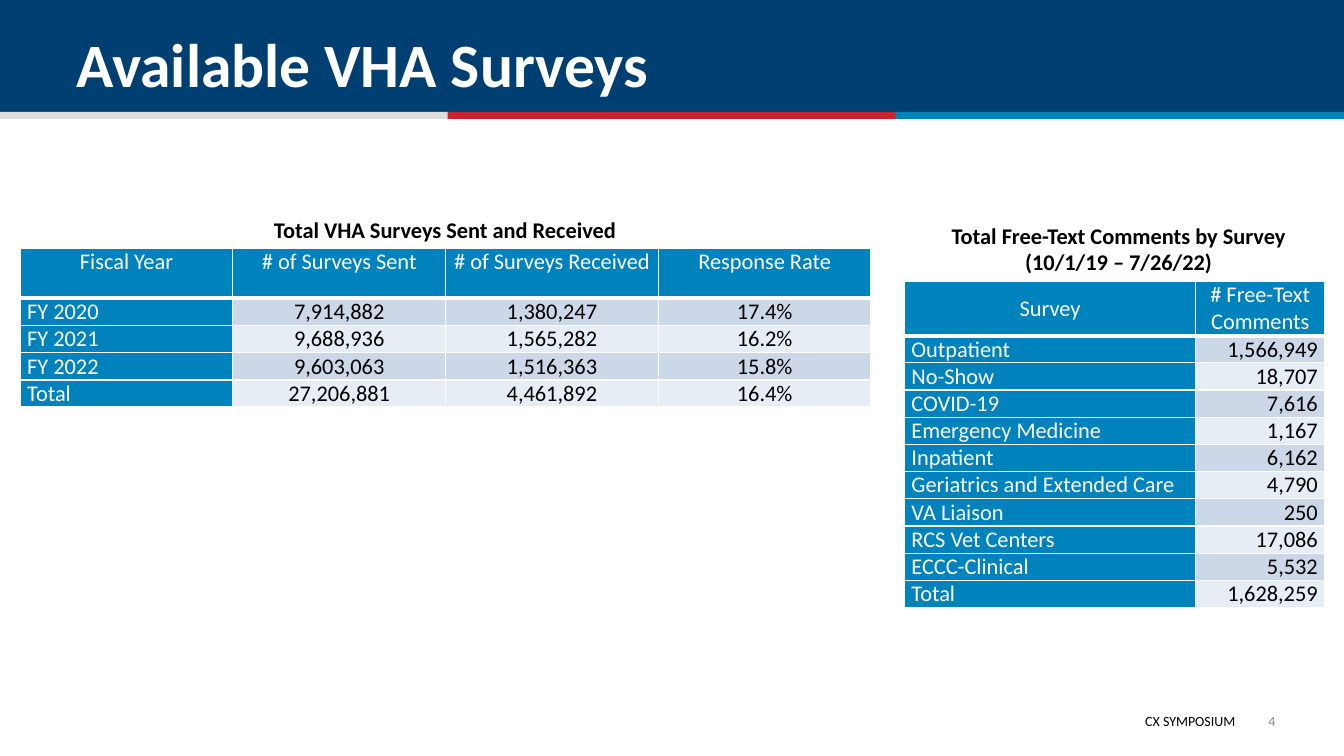
import pptx
import pptx.util
import pptx.dml.color
import pptx.enum.shapes
import pptx.enum.text
import pptx.oxml
from pptx.oxml.ns import qn

Inches, Pt = pptx.util.Inches, pptx.util.Pt
RGBColor = pptx.dml.color.RGBColor
ALIGN, ANCHOR = pptx.enum.text.PP_ALIGN, pptx.enum.text.MSO_ANCHOR

NAVY = RGBColor(0x00, 0x3F, 0x72)
BLUE = RGBColor(0x00, 0x82, 0xBD)
RED = RGBColor(0xC6, 0x26, 0x2D)
SILVER = RGBColor(0xDB, 0xDC, 0xDE)
GRAY = RGBColor(0x8C, 0x8C, 0x8C)
BAND_DARK = RGBColor(0xCC, 0xD8, 0xE8)
BAND_LIGHT = RGBColor(0xE7, 0xED, 0xF4)
WHITE = RGBColor(0xFF, 0xFF, 0xFF)
BLACK = RGBColor(0, 0, 0)

# Content
TITLE = "Available VHA Surveys"
SENT_CAPTION = "Total VHA Surveys Sent and Received"
SENT_ROWS = [
    ("Fiscal Year", "# of Surveys Sent", "# of Surveys Received", "Response Rate"),
    ("FY 2020", "7,914,882", "1,380,247", "17.4%"),
    ("FY 2021", "9,688,936", "1,565,282", "16.2%"),
    ("FY 2022", "9,603,063", "1,516,363", "15.8%"),
    ("Total", "27,206,881", "4,461,892", "16.4%"),
]
COMMENT_CAPTION = "Total Free-Text Comments by Survey (10/1/19 – 7/26/22)"
COMMENT_ROWS = [
    ("Survey", "# Free-Text Comments"),
    ("Outpatient", "1,566,949"),
    ("No-Show", "18,707"),
    ("COVID-19", "7,616"),
    ("Emergency Medicine", "1,167"),
    ("Inpatient", "6,162"),
    ("Geriatrics and Extended Care", "4,790"),
    ("VA Liaison", "250"),
    ("RCS Vet Centers", "17,086"),
    ("ECCC-Clinical", "5,532"),
    ("Total", "1,628,259"),
]
FOOTER, PAGE = "CX SYMPOSIUM", "4"
ROW_HEIGHT = 0.27


def write(tf, text, size=16, color=BLACK, bold=False, align=ALIGN.LEFT):
    p = tf.paragraphs[0]
    p.alignment = align
    r = p.add_run()
    r.text = text
    r.font.name, r.font.size, r.font.bold = "Calibri", Pt(size), bold
    r.font.color.rgb = color


def add_text(s, box, text, anchor=ANCHOR.TOP, inset=None, **fmt):
    tf = s.shapes.add_textbox(*map(Inches, box)).text_frame
    tf.word_wrap = True
    tf.vertical_anchor = anchor
    if inset is not None:
        tf.margin_left = tf.margin_right = tf.margin_top = tf.margin_bottom = Inches(inset)
    write(tf, text, **fmt)


def add_bar(s, left, top, width, height, color):
    sp = s.shapes.add_shape(pptx.enum.shapes.MSO_SHAPE.RECTANGLE,
                            *map(Inches, (left, top, width, height)))
    sp.shadow.inherit = False
    sp.fill.solid()
    sp.fill.fore_color.rgb = color
    sp.line.fill.background()


def set_borders(cell, bottom):
    # Borders come before the fill in the cell properties
    tcPr = cell._tc.get_or_add_tcPr()
    for i, (side, width) in enumerate((("L", 1), ("R", 1), ("T", 1), ("B", bottom))):
        ln = pptx.oxml.parse_xml(
            f'<a:ln{side} xmlns:a="http://schemas.openxmlformats.org/drawingml/2006/main"'
            f' w="{Pt(width)}"><a:solidFill><a:srgbClr val="{WHITE}"/></a:solidFill></a:ln{side}>')
        tcPr.insert(i, ln)


def add_table(s, left, top, widths, header_height, rows, value_align, header_anchor):
    heights = [header_height] + [ROW_HEIGHT] * (len(rows) - 1)
    tbl = s.shapes.add_table(len(rows), len(widths), Inches(left), Inches(top),
                             Inches(sum(widths)), Inches(sum(heights))).table
    tbl.first_row = tbl.horz_banding = False
    for col, width in zip(tbl.columns, widths):
        col.width = Inches(width)
    for i, values in enumerate(rows):
        tbl.rows[i].height = Inches(heights[i])
        for j, value in enumerate(values):
            cell = tbl.cell(i, j)
            cell.margin_left = cell.margin_right = Inches(0.07)
            cell.margin_top = cell.margin_bottom = 0
            cell.vertical_anchor = ANCHOR.MIDDLE if i else header_anchor
            label = i == 0 or j == 0
            cell.fill.solid()
            cell.fill.fore_color.rgb = BLUE if label else BAND_DARK if i % 2 else BAND_LIGHT
            set_borders(cell, 1 if i else 3)
            align = ALIGN.CENTER if i == 0 else ALIGN.LEFT if j == 0 else value_align
            write(cell.text_frame, value, color=WHITE if label else BLACK, align=align)


prs = pptx.Presentation()
prs.slide_width, prs.slide_height = Inches(13.33), Inches(7.5)
s = prs.slides.add_slide(prs.slide_layouts[6])

# Header band with three stripes
add_bar(s, 0, 0, 13.33, 1.14, NAVY)
for i, color in enumerate((SILVER, RED, BLUE)):
    add_bar(s, i * 4.44, 1.11, 4.45, 0.07, color)
add_text(s, (0.66, 0.15, 12, 0.89), TITLE, anchor=ANCHOR.BOTTOM, size=44, color=WHITE, bold=True)

# Tables and captions
add_table(s, 0.2, 2.46, [2.11] * 4, 0.5, SENT_ROWS, ALIGN.CENTER, ANCHOR.TOP)
add_table(s, 8.97, 2.79, [2.89, 1.28], 2 * ROW_HEIGHT, COMMENT_ROWS, ALIGN.RIGHT, ANCHOR.MIDDLE)
add_text(s, (1.41, 2.09, 6.01, 0.37), SENT_CAPTION, anchor=ANCHOR.MIDDLE,
         bold=True, align=ALIGN.CENTER)
add_text(s, (9.29, 2.15, 3.61, 0.64), COMMENT_CAPTION, bold=True, align=ALIGN.CENTER)

# Footer
add_text(s, (5.51, 7.02, 6.84, 0.27), FOOTER, size=10, align=ALIGN.RIGHT)
add_text(s, (12.29, 6.95, 0.36, 0.4), PAGE, anchor=ANCHOR.MIDDLE, inset=0,
         size=10, color=GRAY, align=ALIGN.RIGHT)

prs.save("out.pptx")
